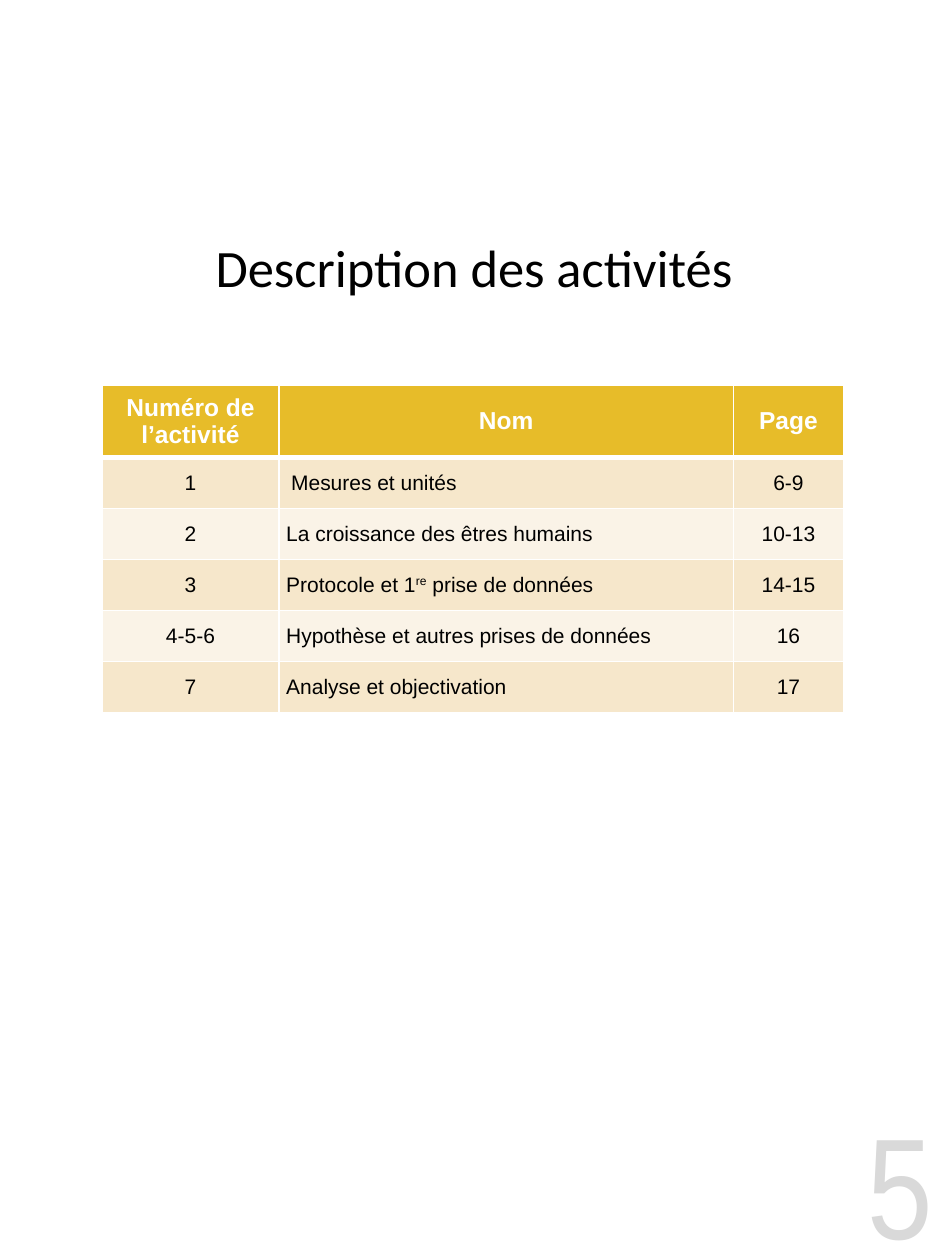
from lxml.etree import SubElement
from pptx import Presentation
from pptx.dml.color import RGBColor
from pptx.enum.text import MSO_ANCHOR, PP_ALIGN
from pptx.oxml.ns import qn
from pptx.util import Cm, Pt


def format_text(text_frame, font_name, size, color, alignment, bold=False):
    for paragraph in text_frame.paragraphs:
        paragraph.alignment = alignment
        for run in paragraph.runs:
            run.font.name = font_name
            run.font.size = Pt(size)
            run.font.bold = bold
            run.font.color.rgb = RGBColor.from_string(color)


def add_border(cell, side, width):
    line = SubElement(cell._tc.get_or_add_tcPr(), qn(f"a:ln{side}"), w=str(Pt(width)))
    fill = SubElement(line, qn("a:solidFill"))
    SubElement(fill, qn("a:srgbClr"), val="FFFFFF")


presentation = Presentation()
presentation.slide_width = Cm(19.05)
presentation.slide_height = Cm(25.4)
slide = presentation.slides.add_slide(presentation.slide_layouts[5])

# Title
title = slide.shapes.title
title.left, title.top, title.width, title.height = Cm(0.38), Cm(4.17), Cm(18.36), Cm(2.41)
title.text_frame.text = "Description des activités"
title.text_frame.vertical_anchor = MSO_ANCHOR.MIDDLE
format_text(title.text_frame, "Calibri", 30, "000000", PP_ALIGN.CENTER)

# Page number
page_number = slide.shapes.add_textbox(Cm(15.95), Cm(22.25), Cm(3.1), Cm(3.15))
page_number.text_frame.word_wrap = True
page_number.text_frame.vertical_anchor = MSO_ANCHOR.MIDDLE
page_number.text_frame.text = "5"
format_text(page_number.text_frame, "Arial Narrow", 82, "D9D9D9", PP_ALIGN.RIGHT)

# Activity table
activities = [
    ("Numéro de\nl’activité", "Nom", "Page"),
    ("1", "Mesures et unités", "6-9"),
    ("2", "La croissance des êtres humains", "10-13"),
    ("3", "Protocole et 1", "14-15"),
    ("4-5-6", "Hypothèse et autres prises de données", "16"),
    ("7", "Analyse et objectivation", "17"),
]
column_widths = [3.56, 9.17, 2.21]
row_heights = [1.36] + [1.03] * 5
table = slide.shapes.add_table(
    len(activities), len(column_widths), Cm(2.06), Cm(7.77),
    Cm(sum(column_widths)), Cm(sum(row_heights)),
).table
for column, width in zip(table.columns, column_widths):
    column.width = Cm(width)
for row, height in zip(table.rows, row_heights):
    row.height = Cm(height)

for row_index, activity in enumerate(activities):
    is_header = row_index == 0
    fill_color = "E7BC29" if is_header else ("FAF3E7", "F6E7CB")[row_index % 2]
    for column_index, text in enumerate(activity):
        cell = table.cell(row_index, column_index)
        is_name = column_index == 1 and not is_header
        cell.text_frame.text = text

        # Superscript ordinal
        if text == "Protocole et 1":
            paragraph = cell.text_frame.paragraphs[0]
            ordinal = paragraph.add_run()
            ordinal.text = "re"
            ordinal._r.get_or_add_rPr().set("baseline", "30000")
            paragraph.add_run().text = " prise de données"

        format_text(
            cell.text_frame, "Arial", 14 if is_header else 12,
            "FFFFFF" if is_header else "000000",
            PP_ALIGN.LEFT if is_name else PP_ALIGN.CENTER, is_header,
        )
        cell.vertical_anchor = MSO_ANCHOR.MIDDLE
        tight = is_name and row_index > 1
        cell.margin_left = cell.margin_right = Cm(0.15 if tight else 0.25)
        cell.margin_top = cell.margin_bottom = Cm(0 if tight else 0.13)

        # White rules, thicker under the header
        for side in "LRTB":
            under_header = (row_index, side) in [(0, "B"), (1, "T")]
            add_border(cell, side, 3 if under_header else 1)
        cell.fill.solid()
        cell.fill.fore_color.rgb = RGBColor.from_string(fill_color)

presentation.save("out.pptx")
